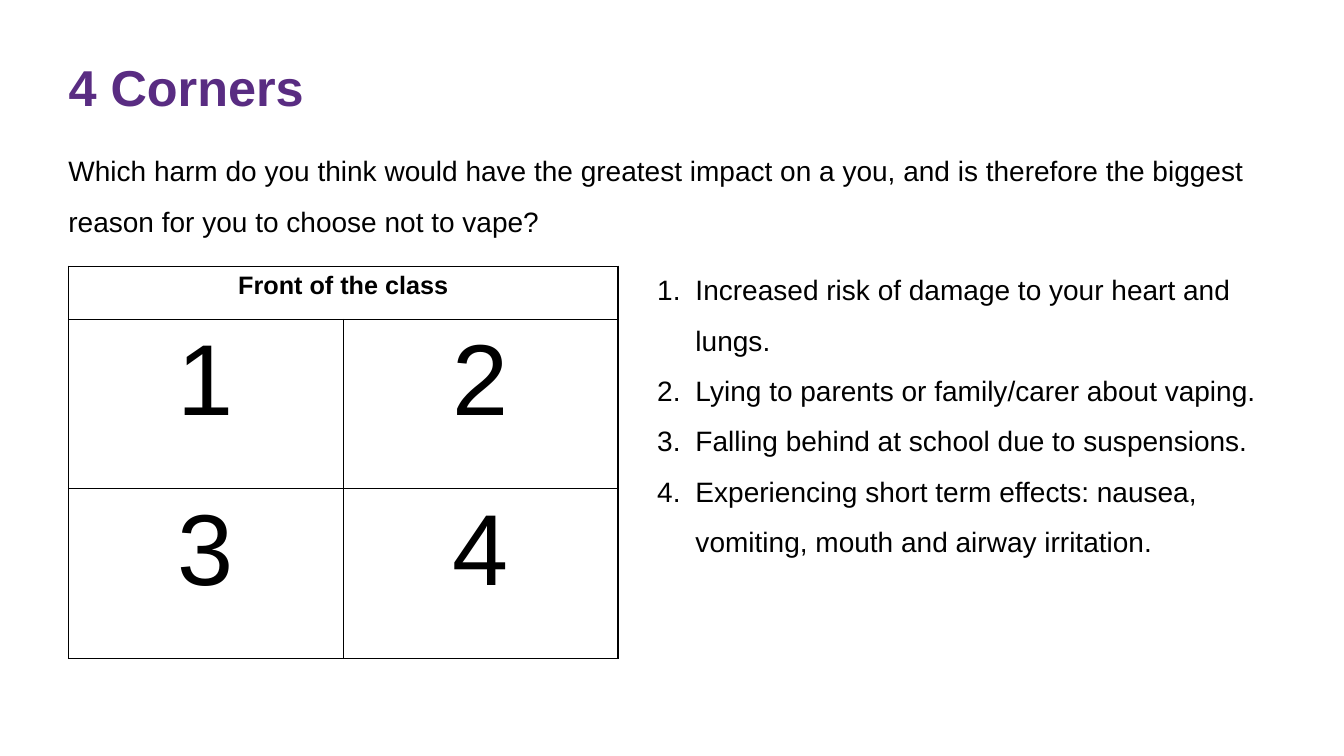
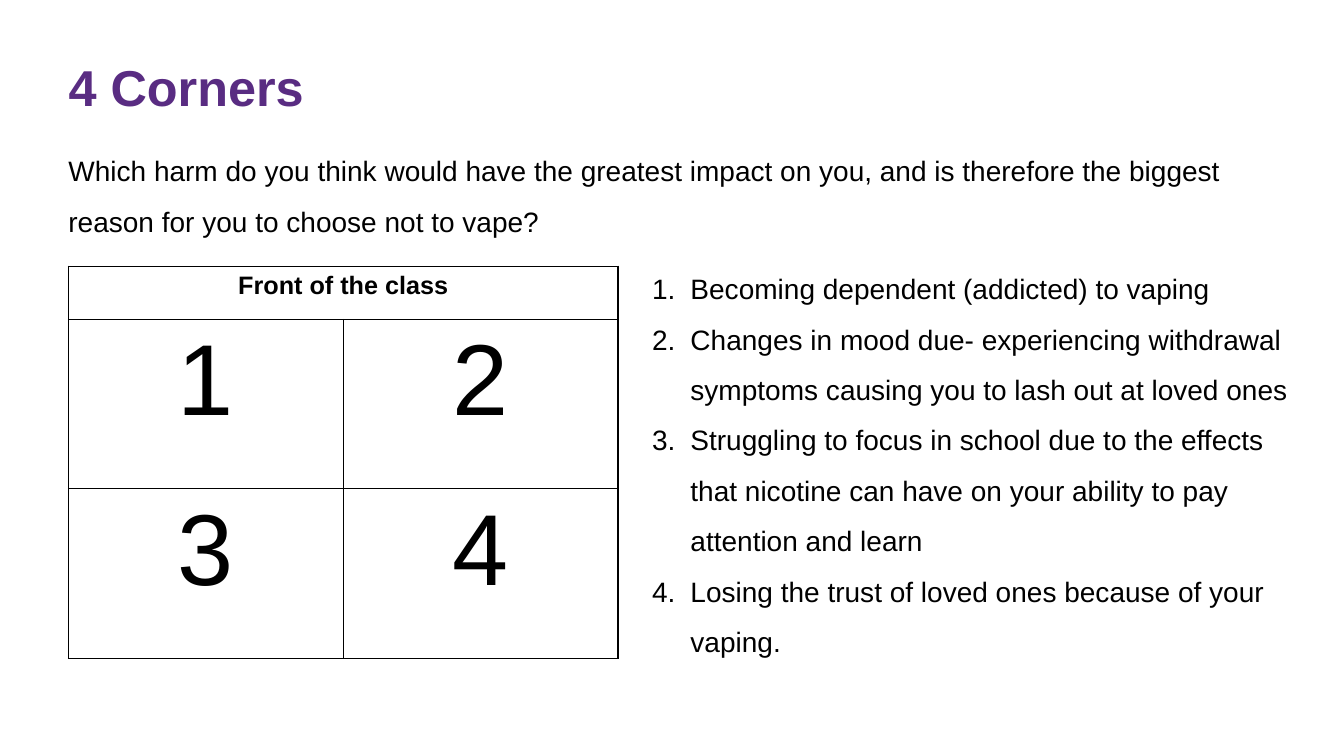
from lxml.etree import SubElement
from pptx import Presentation
from pptx.dml.color import RGBColor
from pptx.enum.text import MSO_ANCHOR, PP_ALIGN
from pptx.oxml.ns import qn
from pptx.util import Inches, Pt

# Content
TITLE = "4 Corners"
TABLE_HEADING = "Front of the class"
CORNERS = [("1", "2"), ("3", "4")]
SLIDES = [
    {
        "question": "Which harm do you think would have the greatest impact on a you, "
                    "and is therefore the biggest reason for you to choose not to vape?",
        "harms": [
            "Increased risk of damage to your heart and lungs.",
            "Lying to parents or family/carer about vaping.",
            "Falling behind at school due to suspensions.",
            "Experiencing short term effects: nausea, vomiting, mouth and airway irritation.",
        ],
        "harms_box": (6.42, 2.49, 6.36, 4.24),
    },
    {
        "question": "Which harm do you think would have the greatest impact on you, "
                    "and is therefore the biggest reason for you to choose not to vape?",
        "harms": [
            "Becoming dependent (addicted) to vaping",
            "Changes in mood due- experiencing withdrawal symptoms causing you "
            "to lash out at loved ones",
            "Struggling to focus in school due to the effects that nicotine can have "
            "on your ability to pay attention and learn",
            "Losing the trust of loved ones because of your vaping.",
        ],
        "harms_box": (6.37, 2.48, 6.67, 5.09),
    },
]

# Shared look: boxes are left, top, width, height in inches
COLORS = {"title": "592C82", "text": "000000", "border": "000000"}
FONT = "Arial"
TITLE_BOX = (0.68, 0.63, 11.97, 0.96)
QUESTION_BOX = (0.58, 1.31, 12.2, 1.05)
TABLE_BOX = (0.68, 2.64, 5.45, 3.89)
HEADING_HEIGHT = 0.53
LIST_INDENT = 0.38
FORMATS = {
    "title": {"size": Pt(36), "bold": True},
    "body": {"size": Pt(20), "bold": False},
    "heading": {"size": Pt(18), "bold": True},
    "corner": {"size": Pt(72), "bold": False},
}


def style_font(paragraph, style):
    for name, value in {"name": FONT, **FORMATS[style]}.items():
        setattr(paragraph.font, name, value)
    color = COLORS["title" if style == "title" else "text"]
    paragraph.font.color.rgb = RGBColor.from_string(color)


def number_paragraph(paragraph):
    properties = paragraph._p.get_or_add_pPr()
    properties.set("marL", str(Inches(LIST_INDENT)))
    properties.set("indent", str(-Inches(LIST_INDENT)))
    SubElement(properties, qn("a:buFont"), typeface="+mj-lt")
    SubElement(properties, qn("a:buAutoNum"), type="arabicPeriod")


def add_text(slide, box, lines, style, spacing, numbered=False, margin=None):
    frame = slide.shapes.add_textbox(*map(Inches, box)).text_frame
    frame.word_wrap = True
    frame.vertical_anchor = MSO_ANCHOR.TOP
    if margin is not None:
        for side in ("left", "top", "right", "bottom"):
            setattr(frame, f"margin_{side}", margin)
    for index, line in enumerate(lines):
        paragraph = frame.add_paragraph() if index else frame.paragraphs[0]
        paragraph.text = line
        paragraph.line_spacing = spacing
        if numbered:
            number_paragraph(paragraph)
        style_font(paragraph, style)


def style_cell(cell):
    properties = cell._tc.get_or_add_tcPr()
    for side in ("lnL", "lnR", "lnT", "lnB"):
        line = SubElement(properties, qn(f"a:{side}"), w=str(Pt(1)))
        fill = SubElement(line, qn("a:solidFill"))
        SubElement(fill, qn("a:srgbClr"), val=COLORS["border"])
    cell.fill.background()


def fill_cell(cell, text, style):
    cell.text = text
    paragraph = cell.text_frame.paragraphs[0]
    paragraph.alignment = PP_ALIGN.CENTER
    style_font(paragraph, style)


def add_corner_table(slide):
    rows, columns = len(CORNERS) + 1, len(CORNERS[0])
    table = slide.shapes.add_table(rows, columns, *map(Inches, TABLE_BOX)).table
    table.first_row = table.horz_banding = False
    corner_height = (TABLE_BOX[3] - HEADING_HEIGHT) / len(CORNERS)
    for index, row in enumerate(table.rows):
        row.height = Inches(corner_height if index else HEADING_HEIGHT)
    for cell in table.iter_cells():
        style_cell(cell)

    # Heading across the top, one number per corner below
    table.cell(0, 0).merge(table.cell(0, columns - 1))
    fill_cell(table.cell(0, 0), TABLE_HEADING, "heading")
    for row, numbers in enumerate(CORNERS, start=1):
        for column, number in enumerate(numbers):
            fill_cell(table.cell(row, column), number, "corner")


def main():
    presentation = Presentation()
    presentation.slide_width = Inches(13.33)
    presentation.slide_height = Inches(7.5)
    for content in SLIDES:
        slide = presentation.slides.add_slide(presentation.slide_layouts[6])
        add_text(slide, TITLE_BOX, [TITLE], "title", 0.9, margin=0)
        add_corner_table(slide)
        add_text(slide, QUESTION_BOX, [content["question"]], "body", 1.5)
        add_text(slide, content["harms_box"], content["harms"], "body", 1.5, numbered=True)
    presentation.save("out.pptx")


if __name__ == "__main__":
    main()
